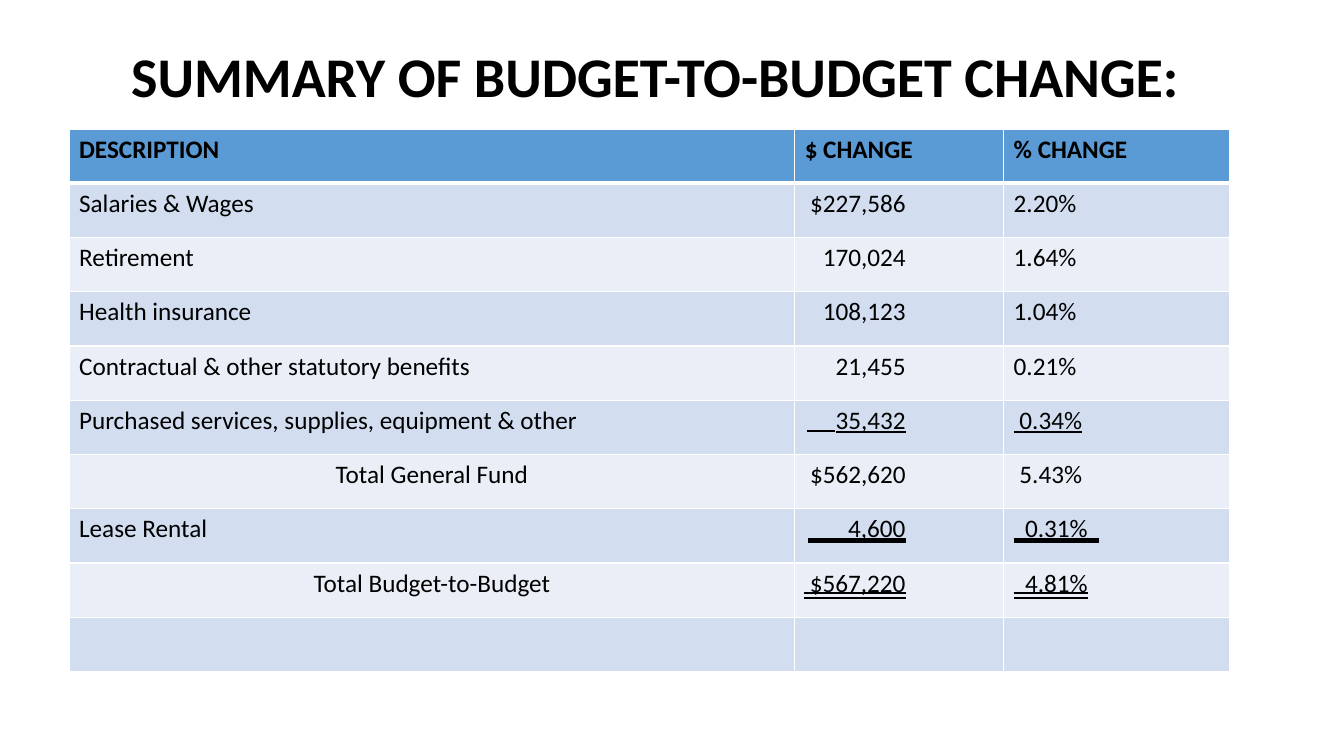
import pptx
import pptx.util
import pptx.dml.color
import pptx.enum.text
import lxml.etree

Cm, Pt = pptx.util.Cm, pptx.util.Pt
RGBColor = pptx.dml.color.RGBColor
Align = pptx.enum.text.PP_ALIGN
Line = pptx.enum.text.MSO_UNDERLINE

BLACK = RGBColor(0x00, 0x00, 0x00)
WHITE = RGBColor(0xFF, 0xFF, 0xFF)
BLUE = RGBColor(0x5B, 0x9B, 0xD5)
BANDS = [RGBColor(0xEA, 0xEF, 0xF7), RGBColor(0xD2, 0xDE, 0xEF)]
FONT, THIN = "Calibri", "Arial Narrow"
DRAW = "http://schemas.openxmlformats.org/drawingml/2006/main"

# Description, dollars, percent, underline of the figures
HEAD = ("DESCRIPTION", "$ CHANGE", "% CHANGE", None)
ROWS = [
    ("Salaries & Wages", "$227,586", "2.20%", None),
    ("Retirement", "170,024", "1.64%", None),
    ("Health insurance", "108,123", "1.04%", None),
    ("Contractual & other statutory benefits", "21,455", "0.21%", None),
    ("Purchased services, supplies, equipment & other", "35,432",
     " 0.34%", Line.SINGLE_LINE),
    ("Total General Fund", "$562,620", " 5.43%", None),
    ("Lease Rental", "4,600", "  0.31%  ", Line.HEAVY_LINE),
    ("Total Budget-to-Budget", "$567,220", "  4.81%", Line.DOUBLE_LINE),
    ("", "", "", None),
]
# Underlined blanks that carry the sum rule across the dollar column
RULES = {"35,432": (5, THIN), "4,600": (7, FONT), "$567,220": (1, FONT)}


def add_run(para, text, size, bold=False, font=FONT, under=None):
    run = para.add_run()
    run.text = text
    run.font.name = font
    run.font.size = Pt(size)
    run.font.bold = bold
    run.font.color.rgb = BLACK
    if under is not None:
        run.font.underline = under


def set_edges(cell, base):
    props = cell._tc.get_or_add_tcPr()
    for side, width in (("L", 1), ("R", 1), ("T", 1), ("B", base)):
        edge = lxml.etree.SubElement(props, f"{{{DRAW}}}ln{side}",
                                     w=str(Pt(width)))
        fill = lxml.etree.SubElement(edge, f"{{{DRAW}}}solidFill")
        lxml.etree.SubElement(fill, f"{{{DRAW}}}srgbClr", val=str(WHITE))


def add_title(slide, left, top, width, height):
    title = slide.shapes.title
    title.left, title.top, title.width, title.height = left, top, width, height
    frame = title.text_frame
    frame.word_wrap = True
    frame.auto_size = pptx.enum.text.MSO_AUTO_SIZE.NONE
    frame.vertical_anchor = pptx.enum.text.MSO_ANCHOR.MIDDLE
    para = frame.paragraphs[0]
    para.alignment = Align.LEFT
    para.line_spacing = 0.9
    add_run(para, "SUMMARY OF BUDGET-TO-BUDGET CHANGE:", 40, True)


def fill_cell(cell, text, row, col, under):
    set_edges(cell, 1 if row else 3)
    cell.fill.solid()
    cell.fill.fore_color.rgb = BANDS[row % 2] if row else BLUE
    para = cell.text_frame.paragraphs[0]
    if not text:
        return
    if col == 0 and text.startswith("Total"):
        para.alignment = Align.CENTER
    if col == 1 and row:
        # Dollar figures line up on the right
        para.alignment = Align.RIGHT
        cell.margin_left, cell.margin_right = Cm(0.1), Cm(2.47)
        if text in RULES:
            count, font = RULES[text]
            add_run(para, " " * count, 18, font=font, under=under)
    add_run(para, text, 18, row == 0, under=under if col else None)


def add_sums(slide, left, top, width, height):
    lines = [HEAD] + ROWS
    table = slide.shapes.add_table(len(lines), 3, left, top,
                                   width, height).table
    # Column shares of the full width
    for col, share in zip(table.columns, (0.625, 0.18, 0.195)):
        col.width = int(width * share)
    for row, (*texts, under) in enumerate(lines):
        table.rows[row].height = int(height / len(lines))
        for col, text in enumerate(texts):
            fill_cell(table.cell(row, col), text, row, col, under)


def main():
    deck = pptx.Presentation()
    deck.slide_width, deck.slide_height = Cm(33.87), Cm(19.05)
    slide = deck.slides.add_slide(deck.slide_layouts[5])
    add_title(slide, Cm(3.05), Cm(0.79), Cm(27.94), Cm(2.44))
    add_sums(slide, Cm(1.74), Cm(3.25), Cm(29.26), Cm(13.67))
    deck.save("out.pptx")


if __name__ == "__main__":
    main()
